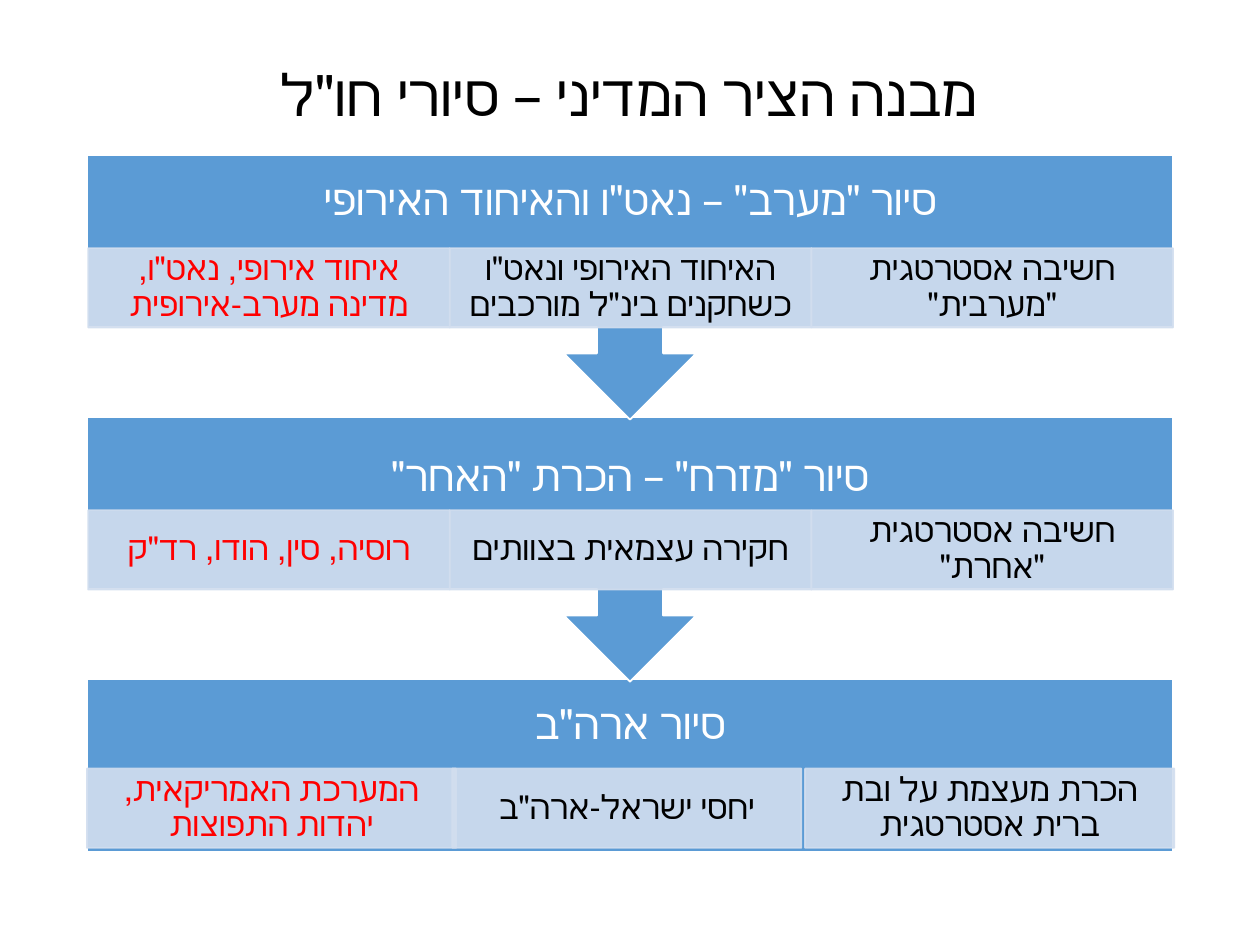
from lxml import etree
from pptx import Presentation
from pptx import util as u
from pptx.dml.color import RGBColor
from pptx.enum import lang, shapes, text
from pptx.oxml import ns

COLORS = {"blue": "5B9BD5", "pale": "D2DEEF", "white": "FFFFFF",
          "black": "000000", "red": "FF0000"}
FONT = "Calibri"
EVEN_COLUMNS = [(5.75, 2.87), (2.88, 2.87), (0.01, 2.87)]
USA_COLUMNS = [(5.7, 2.93), (2.9, 2.77), (0, 2.93)]
CALLOUT = shapes.MSO_SHAPE.UP_ARROW_CALLOUT
RECTANGLE = shapes.MSO_SHAPE.RECTANGLE
STAGES = [
    {"top": 5.39, "height": 1.37, "kind": RECTANGLE, "cell_top": 0.71,
     "columns": USA_COLUMNS, "heading": "סיור ארה\"ב", "insets": (0.19, 0.19),
     "cells": ["הכרת מעצמת על ובת ברית אסטרטגית", "יחסי ישראל-ארה\"ב",
               "המערכת האמריקאית, יהדות התפוצות"]},
    {"top": 3.31, "height": 2.1, "kind": CALLOUT, "cell_top": 0.74,
     "columns": EVEN_COLUMNS, "heading": "סיור \"מזרח\" – הכרת \"האחר\"",
     "insets": (0.34, 0.12),
     "cells": ["חשיבה אסטרטגית \"אחרת\"", "חקירה עצמאית בצוותים",
               "רוסיה, סין, הודו, רד\"ק"]},
    {"top": 1.23, "height": 2.1, "kind": CALLOUT, "cell_top": 0.74,
     "columns": EVEN_COLUMNS, "heading": "סיור \"מערב\" – נאט\"ו והאיחוד האירופי",
     "insets": (0.19, 0.19),
     "cells": ["חשיבה אסטרטגית \"מערבית\"",
               "האיחוד האירופי ונאט\"ו כשחקנים בינ\"ל מורכבים",
               "איחוד אירופי, נאט\"ו, מדינה מערב-אירופית"]},
]


def color(name):
    return RGBColor.from_string(COLORS[name])


def write(shape, words, size, ink, side, top, bottom):
    frame = shape.text_frame
    frame.word_wrap = True
    frame.auto_size = text.MSO_AUTO_SIZE.NONE
    frame.vertical_anchor = text.MSO_ANCHOR.MIDDLE
    frame.margin_left = frame.margin_right = u.Inches(side)
    frame.margin_top, frame.margin_bottom = u.Inches(top), u.Inches(bottom)
    para = frame.paragraphs[0]
    para.alignment = text.PP_ALIGN.CENTER
    para.line_spacing = 0.9
    para._p.get_or_add_pPr().set("rtl", "1")
    span = para.add_run()
    span.text = words
    span.font.size = u.Pt(size)
    span.font.name = FONT
    span.font.color.rgb = color(ink)
    span.font.language_id = lang.MSO_LANGUAGE_ID.HEBREW


def add_block(page, kind, left, top, width, height, fill, line, opacity=100):
    block = page.shapes.add_shape(kind, *map(u.Inches, (left, top, width, height)))
    block.shadow.inherit = False
    block.fill.solid()
    block.fill.fore_color.rgb = color(fill)
    block.line.color.rgb = color(line)
    block.line.width = u.Pt(1)
    if opacity < 100:
        for tint in block._element.spPr.iter(ns.qn("a:srgbClr")):
            etree.SubElement(tint, ns.qn("a:alpha"), val=str(opacity * 1000))
    return block


def add_title(page, left, top, width, height):
    title = page.shapes.title
    title.left, title.top = u.Inches(left), u.Inches(top)
    title.width, title.height = u.Inches(width), u.Inches(height)
    write(title, "מבנה הציר המדיני – סיורי חו\"ל", 33, "black", 0.1, 0.05, 0.05)


def add_stage(page, stage, left, width):
    top = stage["top"]
    body = add_block(page, stage["kind"], left, top, width, stage["height"],
                     "blue", "white")
    if stage["kind"] == CALLOUT:
        body.rotation = 180
    heading = page.shapes.add_textbox(*map(u.Inches, (left, top, width, 0.74)))
    write(heading, stage["heading"], 24, "white", 0.19, *stage["insets"])
    inks = ("black", "black", "red")
    for words, (offset, span), ink in zip(stage["cells"], stage["columns"], inks):
        cell = add_block(page, RECTANGLE, left + offset, top + stage["cell_top"],
                         span, 0.63, "pale", "pale", 90)
        write(cell, words, 19, ink, 0.08, 0.03, 0.03)


def main():
    deck = Presentation()
    deck.slide_width, deck.slide_height = u.Inches(10), u.Inches(7.5)
    page = deck.slides.add_slide(deck.slide_layouts[5])
    add_title(page, 0.67, 0.4, 8.65, 0.75)
    for stage in STAGES:
        add_stage(page, stage, 0.69, 8.62)
    deck.save("out.pptx")


if __name__ == "__main__":
    main()
